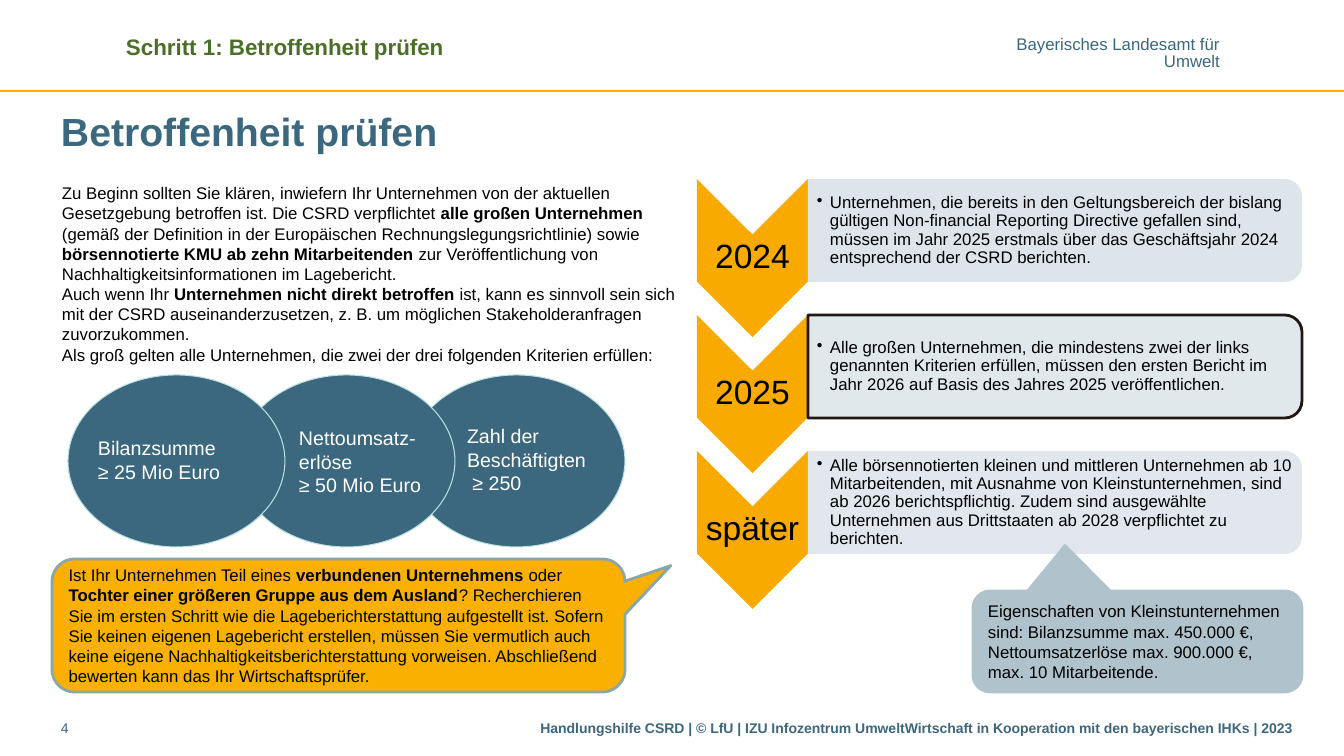
from dataclasses import dataclass

from lxml.etree import SubElement
from pptx import Presentation
from pptx.dml.color import RGBColor
from pptx.enum.shapes import MSO_CONNECTOR, MSO_SHAPE
from pptx.enum.text import MSO_ANCHOR, MSO_AUTO_SIZE, PP_ALIGN
from pptx.oxml.ns import qn
from pptx.util import Pt

EMU_PER_PX = 914400 / 100.8


@dataclass(frozen=True)
class Theme:
    font: str = "Arial"
    blue: str = "3B687F"
    green: str = "4B6E28"
    amber: str = "F9AA00"
    note_amber: str = "F9B000"
    note_edge: str = "8AA6A8"
    circle_edge: str = "BBE0E3"
    band: str = "DEE5EA"
    band_marked: str = "E1E8EC"
    band_edge: str = "1E1713"
    info: str = "B0C2CB"
    black: str = "000000"
    white: str = "FFFFFF"
    title_size: int = 28
    year_size: int = 24
    step_size: int = 16
    circle_size: int = 14
    body_size: int = 12
    footer_size: int = 10


THEME = Theme()


def px(length):
    return round(length * EMU_PER_PX)


def write_text(frame, paragraphs, *, size=THEME.body_size, color=THEME.black, bold=False,
               align=PP_ALIGN.LEFT, anchor=MSO_ANCHOR.TOP, insets=(10, 5, 10, 5),
               spacing=None, bullet_indent=0):
    """Fill a frame; **...** marks bold words and a newline breaks the line."""
    frame.word_wrap = True
    frame.auto_size = MSO_AUTO_SIZE.NONE
    frame.vertical_anchor = anchor
    frame.margin_left, frame.margin_top, frame.margin_right, frame.margin_bottom = map(px, insets)
    for index, text in enumerate(paragraphs):
        paragraph = frame.add_paragraph() if index else frame.paragraphs[0]
        paragraph.alignment = align
        if spacing:
            paragraph.line_spacing = spacing
        if bullet_indent:
            properties = paragraph._p.get_or_add_pPr()
            properties.set("marL", str(px(bullet_indent)))
            properties.set("indent", str(-px(bullet_indent)))
            SubElement(properties, qn("a:buChar")).set("char", "•")
        for part, words in enumerate(text.split("**")):
            for number, line in enumerate(words.split("\n")):
                if number:
                    paragraph.add_line_break()
                if not line:
                    continue
                run = paragraph.add_run()
                run.text = line
                run.font.name = THEME.font
                run.font.size = Pt(size)
                run.font.bold = bold or part % 2 == 1
                run.font.color.rgb = RGBColor.from_string(color)


def add_text(slide, box, paragraphs, **text_format):
    write_text(slide.shapes.add_textbox(*map(px, box)).text_frame, paragraphs, **text_format)


def add_figure(slide, preset, box, fill, edge=None, edge_width=2, turned=False):
    """Place a preset in the box; a turned one is rotated by 90° to fill it."""
    left, top, width, height = box
    if turned:
        left, top = left + (width - height) / 2, top + (height - width) / 2
        width, height = height, width
    figure = slide.shapes.add_shape(preset, *map(px, (left, top, width, height)))
    figure.rotation = 90 if turned else 0
    figure.shadow.inherit = False
    figure.fill.solid()
    figure.fill.fore_color.rgb = RGBColor.from_string(fill)
    if edge:
        figure.line.color.rgb = RGBColor.from_string(edge)
        figure.line.width = Pt(edge_width)
    else:
        figure.line.fill.background()
    return figure


def add_header(slide, box):
    left, top, width, height = box
    rule = slide.shapes.add_connector(MSO_CONNECTOR.STRAIGHT, px(left), px(top + height),
                                      px(left + width), px(top + height))
    rule.line.color.rgb = RGBColor.from_string(THEME.amber)
    rule.line.width = Pt(2)
    SubElement(rule._element.spPr, qn("a:effectLst"))
    add_text(slide, (left + 1015, top + 37, 205, 34), ["Bayerisches Landesamt für", "Umwelt"],
             color=THEME.blue, align=PP_ALIGN.RIGHT, insets=(0, 0, 0, 0), spacing=0.85)
    add_text(slide, (left + 116, top + 28, 373, 37), ["Schritt 1: Betroffenheit prüfen"],
             size=THEME.step_size, color=THEME.green, bold=True)


def add_title(slide, box):
    title = slide.shapes.title
    title.left, title.top, title.width, title.height = map(px, box)
    write_text(title.text_frame, ["Betroffenheit prüfen"], size=THEME.title_size,
               color=THEME.blue, bold=True, anchor=MSO_ANCHOR.MIDDLE, insets=(0, 5, 0, 5))


def add_criteria(slide, box):
    left, top, width, height = box
    circle_width, pitch = 217, (width - 217) / 2
    # The leftmost circle lies on top
    for place in (2, 1, 0):
        add_figure(slide, MSO_SHAPE.FLOWCHART_CONNECTOR,
                   (left + place * pitch, top, circle_width, height),
                   THEME.blue, THEME.circle_edge, 0.75)
    labels = [
        (20, 56, 172, ["Bilanzsumme", "≥ 25 Mio Euro"]),
        (51, 46, 148, ["Nettoumsatz-\nerlöse", "≥ 50 Mio Euro"]),
        (49, 44, 168, ["Zahl der Beschäftigten\n ≥ 250"]),
    ]
    for place, (inset, drop, label_width, criterion) in enumerate(labels):
        add_text(slide, (left + place * pitch + inset, top + drop, label_width, 82), criterion,
                 size=THEME.circle_size, color=THEME.white)


def add_timeline(slide, box, stages):
    left, top, width, height = box
    arrow_width, arrow_height, band_height = 111, 158, 103
    pitch = (height - arrow_height) / (len(stages) - 1)
    for row, (year, duty, fill, edge, opacity) in enumerate(stages):
        row_top = top + row * pitch
        add_figure(slide, MSO_SHAPE.CHEVRON, (left, row_top, arrow_width, arrow_height),
                   THEME.amber, turned=True)
        add_text(slide, (left, row_top + 55, arrow_width, 47), [year], size=THEME.year_size,
                 align=PP_ALIGN.CENTER, anchor=MSO_ANCHOR.MIDDLE, insets=(2, 2, 2, 2), spacing=0.9)
        band_left, band_width = left + arrow_width, width - arrow_width
        band = add_figure(slide, MSO_SHAPE.ROUND_2_SAME_RECTANGLE,
                          (band_left, row_top, band_width, band_height), fill, edge, turned=True)
        if opacity < 100:
            color = band._element.spPr.find(".//" + qn("a:srgbClr"))
            SubElement(color, qn("a:alpha")).set("val", str(opacity * 1000))
        add_text(slide, (band_left, row_top + 5, band_width - 5, band_height - 10), [duty],
                 anchor=MSO_ANCHOR.MIDDLE, insets=(9, 1, 1, 1), spacing=0.9, bullet_indent=13)


def add_callout(slide, box, text, fill, edge, tip):
    callout = add_figure(slide, MSO_SHAPE.ROUNDED_RECTANGULAR_CALLOUT, box, fill, edge)
    for index, value in enumerate(tip):
        callout.adjustments[index] = value
    write_text(callout.text_frame, [text], anchor=MSO_ANCHOR.MIDDLE)


def add_footer(slide, box):
    left, top, width, height = box
    add_text(slide, (left, top, 71, height), ["4"], size=THEME.footer_size,
             color=THEME.blue, insets=(0, 5, 0, 5))
    add_text(slide, (left + width - 780, top, 780, height),
             ["Handlungshilfe CSRD | © LfU | IZU Infozentrum UmweltWirtschaft in Kooperation "
              "mit den bayerischen IHKs | 2023"],
             size=THEME.footer_size, color=THEME.blue, bold=True, align=PP_ALIGN.RIGHT)


INTRODUCTION = [
    "Zu Beginn sollten Sie klären, inwiefern Ihr Unternehmen von der aktuellen Gesetzgebung "
    "betroffen ist. Die CSRD verpflichtet **alle großen Unternehmen **(gemäß der Definition in der "
    "Europäischen Rechnungslegungsrichtlinie) sowie **börsennotierte KMU ab zehn Mitarbeitenden **"
    "zur Veröffentlichung von Nachhaltigkeitsinformationen im Lagebericht.",
    "Auch wenn Ihr **Unternehmen nicht direkt betroffen **ist, kann es sinnvoll sein sich mit der "
    "CSRD auseinanderzusetzen, z. B. um möglichen Stakeholderanfragen zuvorzukommen.",
    "Als groß gelten alle Unternehmen, die zwei der drei folgenden Kriterien erfüllen:",
]
STAGES = [
    ("2024", "Unternehmen, die bereits in den Geltungsbereich der bislang gültigen Non-financial "
     "Reporting Directive gefallen sind, müssen im Jahr 2025 erstmals über das Geschäftsjahr 2024 "
     "entsprechend der CSRD berichten.", THEME.band, None, 100),
    ("2025", "Alle großen Unternehmen, die mindestens zwei der links genannten Kriterien erfüllen, "
     "müssen den ersten Bericht im Jahr 2026 auf Basis des Jahres 2025 veröffentlichen.",
     THEME.band_marked, THEME.band_edge, 100),
    ("später", "Alle börsennotierten kleinen und mittleren Unternehmen ab 10 Mitarbeitenden, mit "
     "Ausnahme von Kleinstunternehmen, sind ab 2026 berichtspflichtig. Zudem sind ausgewählte "
     "Unternehmen aus Drittstaaten ab 2028 verpflichtet zu berichten.", THEME.band, None, 90),
]
GROUP_NOTE = (
    "Ist Ihr Unternehmen Teil eines **verbundenen Unternehmens **oder **Tochter einer größeren "
    "Gruppe aus dem Ausland**? Recherchieren Sie im ersten Schritt wie die Lageberichterstattung "
    "aufgestellt ist. Sofern Sie keinen eigenen Lagebericht erstellen, müssen Sie vermutlich auch "
    "keine eigene Nachhaltigkeitsberichterstattung vorweisen. Abschließend bewerten kann das Ihr "
    "Wirtschaftsprüfer.")
MICRO_NOTE = ("Eigenschaften von Kleinstunternehmen sind: Bilanzsumme max. 450.000 €, "
              "Nettoumsatzerlöse max. 900.000 €, max. 10 Mitarbeitende.")


def main():
    presentation = Presentation()
    presentation.slide_width, presentation.slide_height = px(1344), px(756)
    slide = presentation.slides.add_slide(presentation.slide_layouts[5])
    add_header(slide, (0, 0, 1344, 91))
    add_title(slide, (61, 103, 1241, 55))
    add_criteria(slide, (68, 375, 557, 172))
    add_text(slide, (52, 178, 636, 214), INTRODUCTION)
    add_timeline(slide, (697, 179, 605, 430), STAGES)
    add_callout(slide, (52, 559, 573, 133), GROUP_NOTE, THEME.note_amber, THEME.note_edge,
                (0.58, -0.45, 0.17))
    add_callout(slide, (973, 591, 329, 101), MICRO_NOTE, THEME.info, THEME.info,
                (-0.22, -0.95, 0.17))
    add_footer(slide, (61, 714, 1241, 31))
    presentation.save("out.pptx")


if __name__ == "__main__":
    main()
